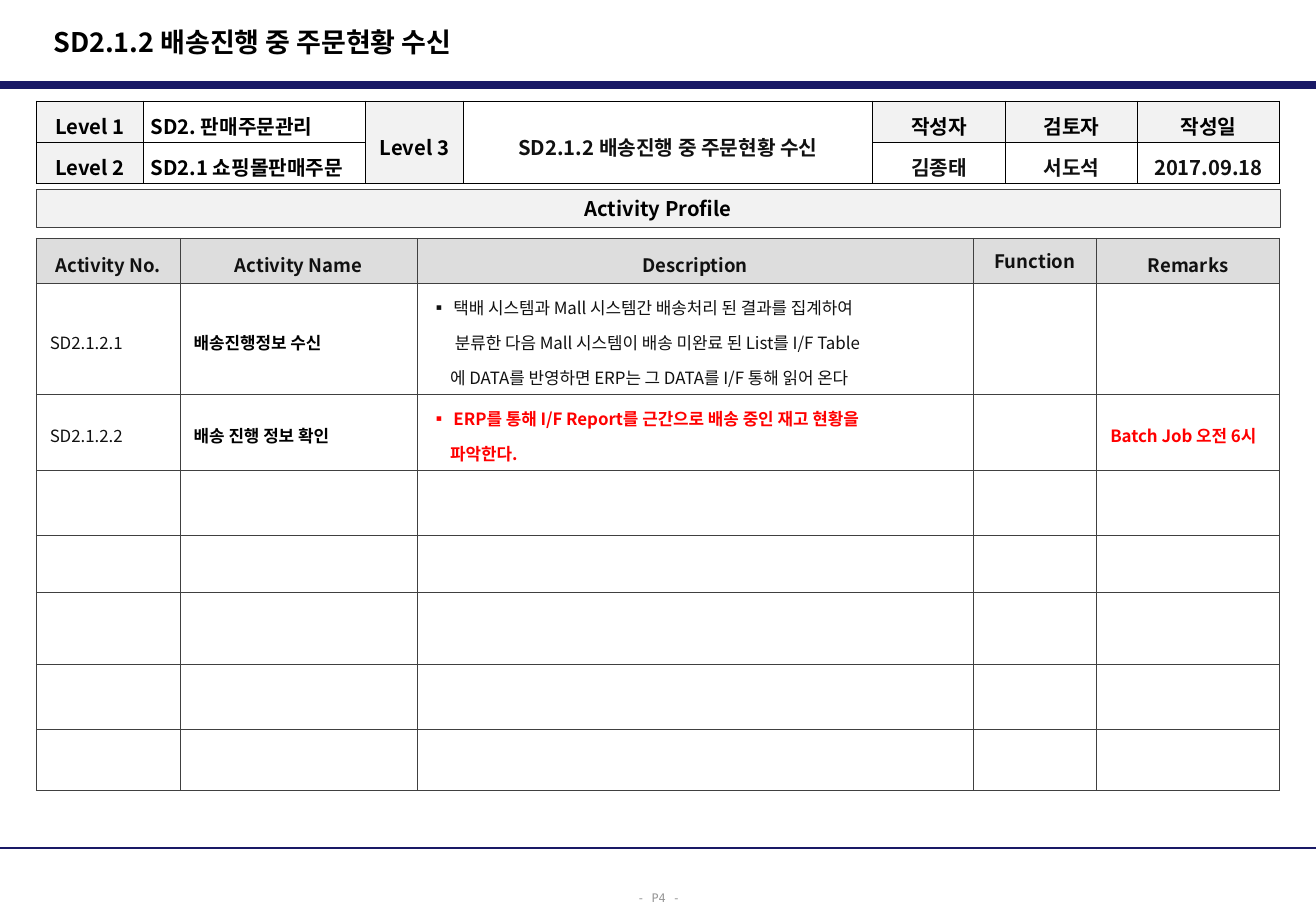
"""Build the activity profile slide for SD2.1.2."""
from dataclasses import dataclass

from lxml.etree import SubElement
from pptx import Presentation
from pptx.dml.color import RGBColor
from pptx.enum.shapes import MSO_CONNECTOR, MSO_SHAPE
from pptx.enum.text import MSO_ANCHOR, MSO_AUTO_SIZE, PP_ALIGN
from pptx.oxml.ns import qn
from pptx.util import Cm, Pt

HUES = {
    "navy": "191966", "black": "000000", "ink": "111111", "red": "FF0000",
    "mute": "969696", "edge": "404040", "pale": "F2F2F2", "head": "DDDDDD",
}
SANS = "Noto Sans CJK KR"
MONO = "DejaVu Sans Mono"
LEFT, WIDE = 0.76, 26.0
NAME = "SD2.1.2 배송진행 중 주문현황 수신"


@dataclass(frozen=True)
class Look:
    size: float
    hue: str = "black"
    bold: bool = True
    face: str = SANS
    align: PP_ALIGN = PP_ALIGN.LEFT
    lead: float = 1.3


@dataclass(frozen=True)
class Line:
    text: str
    inset: float = 0
    mark: str = ""


@dataclass(frozen=True)
class Box:
    lines: tuple[Line, ...]
    look: Look
    fill: str = ""
    pad: float = 0.1


@dataclass(frozen=True)
class Grid:
    top: float
    cols: tuple[float, ...]
    rows: tuple[float, ...]
    edge: str
    side: float
    cells: dict[tuple[int, int], Box]
    spans: tuple[int, ...] = ()


@dataclass(frozen=True)
class Rule:
    top: float
    width: float


def tint(key: str) -> RGBColor:
    return RGBColor.from_string(HUES[key])


def style(para, look: Look) -> None:
    para.alignment = look.align
    para.line_spacing = look.lead
    font = para.font
    font.size = Pt(look.size)
    font.bold = look.bold
    font.color.rgb = tint(look.hue)
    font.name = look.face
    base = para._p.get_or_add_pPr().find(qn("a:defRPr"))
    SubElement(base, qn("a:ea")).set("typeface", look.face)


def write(frame, lines: tuple[Line, ...], look: Look) -> None:
    for num, line in enumerate(lines):
        para = frame.add_paragraph() if num else frame.paragraphs[0]
        para.text = line.text
        if num:
            para.space_before = Pt(look.size * 0.2)
        props = para._p.get_or_add_pPr()
        if line.inset:
            props.set("marL", str(Cm(line.inset)))
        if line.mark:
            props.set("indent", str(-Cm(line.inset)))
            SubElement(props, qn("a:buFont")).set("typeface", look.face)
            SubElement(props, qn("a:buChar")).set("char", line.mark)
        style(para, look)


def frame_cell(cell, edge: str) -> None:
    props = cell._tc.get_or_add_tcPr()
    for side in "LRTB":
        line = SubElement(props, qn(f"a:ln{side}"), w=str(Pt(0.5)))
        fill = SubElement(line, qn("a:solidFill"))
        SubElement(fill, qn("a:srgbClr")).set("val", HUES[edge])


def draw_grid(slide, grid: Grid) -> None:
    table = slide.shapes.add_table(
        len(grid.rows), len(grid.cols), Cm(LEFT), Cm(grid.top),
        Cm(sum(grid.cols)), Cm(sum(grid.rows))).table
    table.first_row = table.horz_banding = False
    for col, width in zip(table.columns, grid.cols):
        col.width = Cm(width)
    for row, height in zip(table.rows, grid.rows):
        row.height = Cm(height)
    for num in grid.spans:
        table.cell(0, num).merge(table.cell(len(grid.rows) - 1, num))
    blank = Box((), Look(10))
    for row in range(len(grid.rows)):
        for col in range(len(grid.cols)):
            cell, box = table.cell(row, col), grid.cells.get((row, col), blank)
            frame_cell(cell, grid.edge)
            cell.vertical_anchor = MSO_ANCHOR.MIDDLE
            cell.margin_left = cell.margin_right = Cm(grid.side)
            cell.margin_top = cell.margin_bottom = Cm(box.pad)
            if box.fill:
                cell.fill.solid()
                cell.fill.fore_color.rgb = tint(box.fill)
            else:
                cell.fill.background()
            write(cell.text_frame, box.lines, box.look)


def draw_rule(slide, rule: Rule, wide: int) -> None:
    line = slide.shapes.add_connector(
        MSO_CONNECTOR.STRAIGHT, 0, Cm(rule.top), wide, Cm(rule.top))
    line.line.color.rgb = tint("navy")
    line.line.width = Pt(rule.width)
    SubElement(line._element.spPr, qn("a:effectLst"))


def draw_title(slide) -> None:
    title = slide.shapes.title
    title.left, title.top = Cm(0.86), Cm(0.41)
    title.width, title.height = Cm(18.06), Cm(0.94)
    frame = title.text_frame
    frame.auto_size = MSO_AUTO_SIZE.NONE
    frame.vertical_anchor = MSO_ANCHOR.MIDDLE
    write(frame, (Line(NAME),), Look(16, lead=1))


def draw_band(slide) -> None:
    band = slide.shapes.add_shape(
        MSO_SHAPE.RECTANGLE, Cm(LEFT), Cm(3.96), Cm(WIDE), Cm(0.79))
    band.shadow.inherit = False
    band.fill.solid()
    band.fill.fore_color.rgb = tint("pale")
    band.line.color.rgb = tint("edge")
    band.line.width = Pt(0.5)
    frame = band.text_frame
    frame.word_wrap = False
    frame.vertical_anchor = MSO_ANCHOR.MIDDLE
    write(frame, (Line("Activity Profile"),),
          Look(12, align=PP_ALIGN.CENTER, lead=1))


def draw_foot(slide) -> None:
    foot = slide.shapes.add_textbox(Cm(13.06), Cm(18.42), Cm(1.42), Cm(0.64))
    foot.text_frame.word_wrap = False
    write(foot.text_frame, (Line("- P4 -"),),
          Look(7, "mute", False, MONO, PP_ALIGN.CENTER))


def info() -> Grid:
    rows = (
        ("Level 1", "SD2. 판매주문관리", "Level 3", NAME, "작성자", "검토자", "작성일"),
        ("Level 2", "SD2.1 쇼핑몰판매주문", "", "", "김종태", "서도석", "2017.09.18"),
    )
    cells = {}
    for row, texts in enumerate(rows):
        for col, text in enumerate(texts):
            label = col in (0, 2) or (row == 0 and col > 3)
            look = Look(12, "black" if label or col == 1 else "ink",
                        align=PP_ALIGN.LEFT if col == 1 else PP_ALIGN.CENTER)
            cells[row, col] = Box(
                (Line(text),), look, "pale" if label else "", 0.03)
    return Grid(2.11, (2.24, 4.64, 2.05, 8.55, 2.78, 2.76, 2.97),
                (0.86, 0.86), "black", 0.15, cells, (2, 3))


def tasks() -> Grid:
    heads = ("Activity No.", "Activity Name", "Description", "Function", "Remarks")
    cells = {}
    for col, text in enumerate(heads):
        plain = text == "Function"
        look = Look(11, "ink", align=PP_ALIGN.CENTER, lead=1 if plain else 1.3)
        cells[0, col] = Box((Line(text),), look, "head", 0 if plain else 0.1)
    code, name, alert = Look(10, "ink", False), Look(10), Look(10, "red")
    cells |= {
        (1, 0): Box((Line("SD2.1.2.1"),), code),
        (1, 1): Box((Line("배송진행정보 수신"),), name),
        (1, 2): Box((
            Line("택배 시스템과 Mall 시스템간 배송처리 된 결과를 집계하여", 0.48, "▪"),
            Line("분류한 다음 Mall 시스템이 배송 미완료 된 List를 I/F Table", 0.51),
            Line("에 DATA를 반영하면 ERP는 그 DATA를 I/F 통해 읽어 온다", 0.41)), code),
        (2, 0): Box((Line("SD2.1.2.2"),), code),
        (2, 1): Box((Line("배송 진행 정보 확인"),), name),
        (2, 2): Box((
            Line("ERP를 통해 I/F Report를 근간으로 배송 중인 재고 현황을", 0.48, "▪"),
            Line("파악한다.", 0.41)), alert),
        (2, 4): Box((Line("Batch Job 오전 6시"),), alert),
    }
    return Grid(4.98, (3.01, 4.95, 11.62, 2.59, 3.82),
                (0.94, 2.32, 1.59, 1.36, 1.19, 1.51, 1.36, 1.28),
                "edge", 0.28, cells)


def main() -> None:
    deck = Presentation()
    deck.slide_width, deck.slide_height = Cm(27.51), Cm(19.05)
    slide = deck.slides.add_slide(deck.slide_layouts[5])
    for rule in (Rule(1.78, 4.5), Rule(17.73, 1.5)):
        draw_rule(slide, rule, deck.slide_width)
    draw_foot(slide)
    draw_title(slide)
    draw_grid(slide, tasks())
    draw_band(slide)
    draw_grid(slide, info())
    deck.save("out.pptx")


if __name__ == "__main__":
    main()
